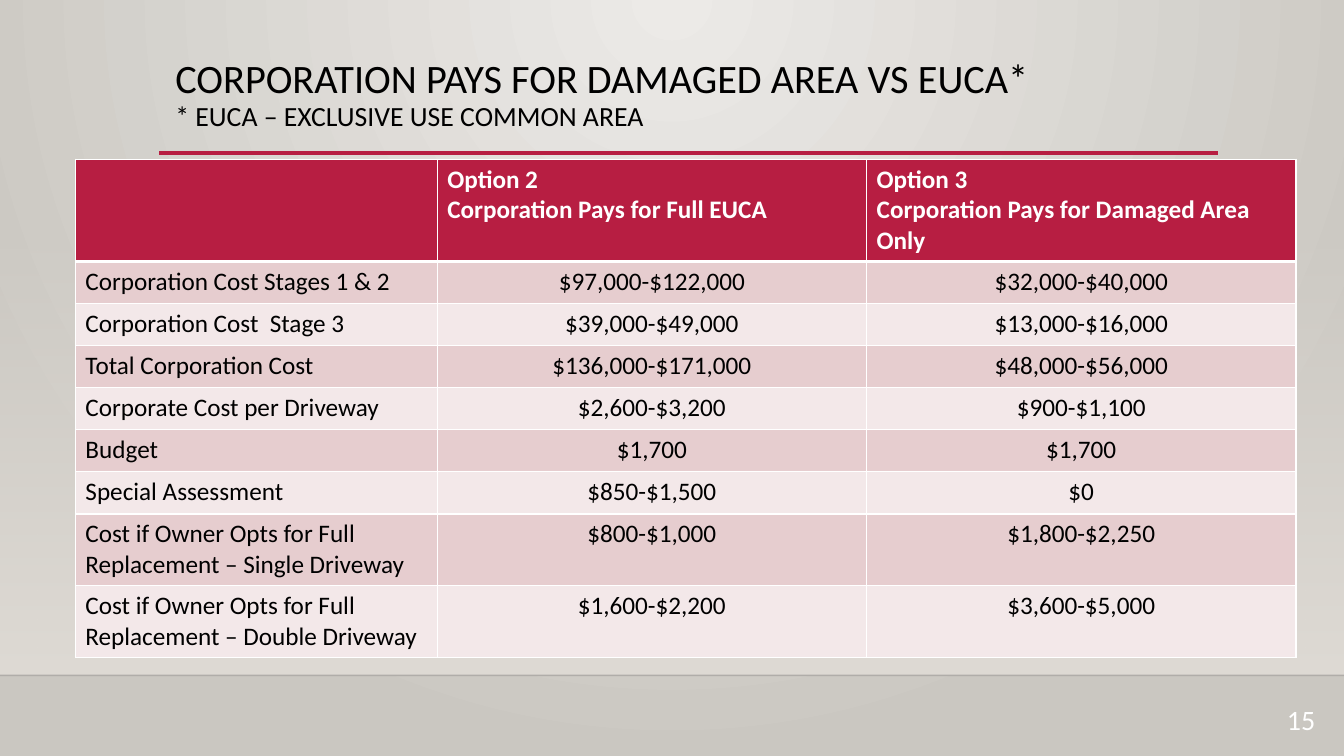
"""Build a slide comparing corporation cost options in a table."""
from dataclasses import dataclass
from typing import Any

from lxml import etree
from pptx import Presentation
from pptx import util as u
from pptx.dml import color
from pptx.enum import shapes, text
from pptx.oxml import ns

FONT = "Calibri"
BLACK, WHITE, RED = "000000", "FFFFFF", "B71E42"
BANDS = ("E6CDCF", "F3E8E9")
COLUMNS = (9.12, 10.82, 10.82)
ROW_HEIGHTS = [2.06] + [1.06] * 6 + [1.24] * 2
ROWS = (
    ("", "Option 2\nCorporation Pays for Full EUCA",
     "Option 3\nCorporation Pays for Damaged Area Only"),
    ("Corporation Cost Stages 1 & 2", "$97,000-$122,000", "$32,000-$40,000"),
    ("Corporation Cost  Stage 3", "$39,000-$49,000", "$13,000-$16,000"),
    ("Total Corporation Cost", "$136,000-$171,000", "$48,000-$56,000"),
    ("Corporate Cost per Driveway", "$2,600-$3,200", "$900-$1,100"),
    ("Budget", "$1,700", "$1,700"),
    ("Special Assessment", "$850-$1,500", "$0"),
    ("Cost if Owner Opts for Full Replacement – Single Driveway",
     "$800-$1,000", "$1,800-$2,250"),
    ("Cost if Owner Opts for Full Replacement – Double Driveway",
     "$1,600-$2,200", "$3,600-$5,000"),
)


@dataclass(frozen=True)
class Rule:
    left: float
    right: float
    y: float
    colour: str
    width: float
    opacity: int = 100


@dataclass(frozen=True)
class Label:
    left: float
    top: float
    width: float
    height: float
    lines: tuple[tuple[str, float], ...]
    colour: str
    align: Any = text.PP_ALIGN.LEFT
    anchor: Any = text.MSO_ANCHOR.TOP
    spacing: float = 1.0


RULES = (
    Rule(0, 33.87, 17.02, "000001", 1, 20),
    Rule(4.02, 30.7, 3.86, RED, 2.5),
)
LABELS = (
    Label(4.17, 1.35, 26.67, 2.11,
          (("CORPORATION PAYS FOR DAMAGED AREA VS EUCA*", 28.8),
           ("* EUCA – EXCLUSIVE USE COMMON AREA", 19.8)), BLACK, spacing=0.9),
    Label(31.5, 17.48, 1.9, 1.27, (("15", 20),), WHITE,
          text.PP_ALIGN.RIGHT, text.MSO_ANCHOR.MIDDLE),
)


def rgb(value: str) -> color.RGBColor:
    return color.RGBColor.from_string(value)


def set_opacity(element: Any, percent: int) -> None:
    first = next(element.iter(ns.qn("a:srgbClr")))
    etree.SubElement(first, ns.qn("a:alpha"), val=str(percent * 1000))


def set_gradient(fill: Any, start: str, end: str) -> None:
    fill.gradient()
    for stop, value in zip(fill.gradient_stops, (start, end)):
        stop.color.rgb = rgb(value)


def add_backdrop(s: Any) -> None:
    set_gradient(s.background.fill, "ECEAE7", "CAC7C1")
    grad = next(s.element.iter(ns.qn("a:gradFill")))
    grad.remove(grad.find(ns.qn("a:lin")))
    path = etree.SubElement(grad, ns.qn("a:path"), path="circle")
    etree.SubElement(path, ns.qn("a:fillToRect"), l="43000", r="43000", b="100000")
    sp = s.shapes.add_shape(shapes.MSO_SHAPE.RECTANGLE, 0, u.Cm(5.61), u.Cm(33.87), u.Cm(11.41))
    sp.shadow.inherit = False
    sp.line.fill.background()
    set_gradient(sp.fill, "DFDBD5", "DFDBD5")
    sp.fill.gradient_angle = 270
    set_opacity(sp.element, 0)


def add_rule(s: Any, rule: Rule) -> None:
    y = u.Cm(rule.y)
    c = s.shapes.add_connector(
        shapes.MSO_CONNECTOR.STRAIGHT, u.Cm(rule.left), y, u.Cm(rule.right), y)
    c.line.color.rgb = rgb(rule.colour)
    c.line.width = u.Pt(rule.width)
    if rule.opacity < 100:
        set_opacity(c.element, rule.opacity)
    etree.SubElement(c.element.spPr, ns.qn("a:effectLst"))


def add_label(s: Any, label: Label) -> None:
    box = (label.left, label.top, label.width, label.height)
    tf = s.shapes.add_textbox(*map(u.Cm, box)).text_frame
    tf.word_wrap = True
    tf.vertical_anchor = label.anchor
    p = tf.paragraphs[0]
    p.alignment = label.align
    p.line_spacing = label.spacing
    p.font.name = FONT
    p.font.color.rgb = rgb(label.colour)
    for i, (line, size) in enumerate(label.lines):
        if i:
            p.add_line_break()
        r = p.add_run()
        r.text = line
        r.font.size = u.Pt(size)


def set_borders(cell: Any, top: float, bottom: float) -> None:
    tc_pr = cell._tc.get_or_add_tcPr()
    for side, width in (("L", 1), ("R", 1), ("T", top), ("B", bottom)):
        ln = etree.SubElement(tc_pr, ns.qn(f"a:ln{side}"), w=str(u.Pt(width)))
        fill = etree.SubElement(ln, ns.qn("a:solidFill"))
        etree.SubElement(fill, ns.qn("a:srgbClr"), val=WHITE)


def fill_cell(cell: Any, value: str, row: int, col: int) -> None:
    header = row == 0
    set_borders(cell, 3 if row == 1 else 1, 3 if header else 1)
    cell.fill.solid()
    cell.fill.fore_color.rgb = rgb(RED if header else BANDS[(row - 1) % 2])
    cell.text = value
    for p in cell.text_frame.paragraphs:
        p.alignment = text.PP_ALIGN.LEFT if header or col == 0 else text.PP_ALIGN.CENTER
        p.font.name = FONT
        p.font.size = u.Pt(18)
        p.font.bold = header
        p.font.color.rgb = rgb(WHITE if header else BLACK)


def add_cost_table(s: Any) -> None:
    table = s.shapes.add_table(
        len(ROWS), len(COLUMNS), u.Cm(1.9), u.Cm(4.01),
        u.Cm(sum(COLUMNS)), u.Cm(sum(ROW_HEIGHTS))).table
    table.horz_banding = False
    for column, width in zip(table.columns, COLUMNS):
        column.width = u.Cm(width)
    for row, (values, height) in enumerate(zip(ROWS, ROW_HEIGHTS)):
        table.rows[row].height = u.Cm(height)
        for col, value in enumerate(values):
            fill_cell(table.cell(row, col), value, row, col)


def main() -> None:
    prs = Presentation()
    prs.slide_width, prs.slide_height = u.Cm(33.87), u.Cm(19.05)
    s = prs.slides.add_slide(prs.slide_layouts[6])
    add_backdrop(s)
    for rule in RULES:
        add_rule(s, rule)
    add_cost_table(s)
    for label in LABELS:
        add_label(s, label)
    prs.save("out.pptx")


if __name__ == "__main__":
    main()
